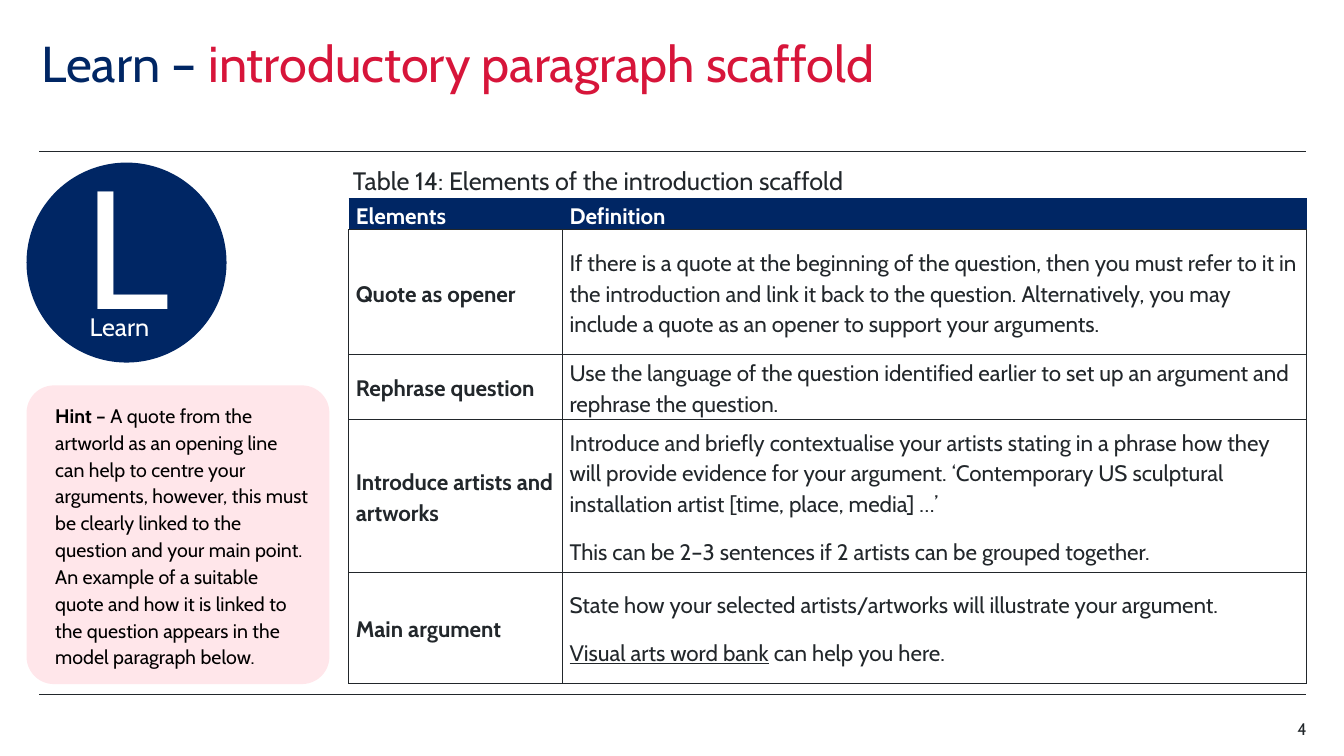
from dataclasses import dataclass

from lxml import etree
from pptx import Presentation
from pptx.dml.color import RGBColor
from pptx.enum.shapes import MSO_CONNECTOR, MSO_SHAPE
from pptx.enum.text import MSO_ANCHOR, MSO_AUTO_SIZE, PP_ALIGN
from pptx.oxml.ns import qn
from pptx.util import Inches, Pt

STRAIGHT = MSO_CONNECTOR.STRAIGHT
OVAL, ROUNDED = MSO_SHAPE.OVAL, MSO_SHAPE.ROUNDED_RECTANGLE
TOP, MIDDLE = MSO_ANCHOR.TOP, MSO_ANCHOR.MIDDLE
LEFT, CENTER, RIGHT = PP_ALIGN.LEFT, PP_ALIGN.CENTER, PP_ALIGN.RIGHT

NAVY, RED, PINK = "002664", "D7153A", "FFE6EA"
INK, WHITE, BLACK = "22272B", "FFFFFF", "000000"
LINE_SPACING = 1.14


@dataclass
class Element:
    name: str
    definition: list[str]
    height: float
    underlined: str = ""


ELEMENTS = [
    Element("Quote as opener", [
        "If there is a quote at the beginning of the question, then you must refer "
        "to it in the introduction and link it back to the question. Alternatively, "
        "you may include a quote as an opener to support your arguments."], 1.24),
    Element("Rephrase question", [
        "Use the language of the question identified earlier to set up an argument "
        "and rephrase the question."], 0.64),
    Element("Introduce artists and artworks", [
        "Introduce and briefly contextualise your artists stating in a phrase how "
        "they will provide evidence for your argument. ‘Contemporary US sculptural "
        "installation artist [time, place, media] …’",
        "This can be 2–3 sentences if 2 artists can be grouped together."], 1.52),
    Element("Main argument", [
        "State how your selected artists/artworks will illustrate your argument.",
        "Visual arts word bank can help you here."], 1.1, "Visual arts word bank"),
]


def rgb(color: str) -> RGBColor:
    return RGBColor.from_string(color)


def style(paragraph, size: float, color: str, bold: bool = False, align=LEFT) -> None:
    paragraph.alignment = align
    font = paragraph.font
    font.name, font.size, font.bold = "Cabin", Pt(size), bold
    font.color.rgb = rgb(color)


def set_margins(frame, left: float, top: float, right: float, bottom: float) -> None:
    frame.margin_left, frame.margin_top = Inches(left), Inches(top)
    frame.margin_right, frame.margin_bottom = Inches(right), Inches(bottom)


def add_rule(y: float) -> None:
    rule = slide.shapes.add_connector(
        STRAIGHT, Inches(0.39), Inches(y), Inches(12.95), Inches(y))
    rule.line.color.rgb, rule.line.width = rgb(INK), Pt(0.5)
    etree.SubElement(rule._element.spPr, qn("a:effectLst"))


def add_panel(kind, box: tuple, color: str):
    panel = slide.shapes.add_shape(kind, *map(Inches, box))
    panel.shadow.inherit = False
    panel.fill.solid()
    panel.fill.fore_color.rgb = panel.line.color.rgb = rgb(color)
    panel.line.width = Pt(1)
    panel.text_frame.word_wrap = True
    panel.text_frame.vertical_anchor = MIDDLE
    return panel


def add_label(text: str, box: tuple, size: float, color: str, align=LEFT,
              anchor=TOP) -> None:
    frame = slide.shapes.add_textbox(*map(Inches, box)).text_frame
    frame.word_wrap, frame.vertical_anchor = True, anchor
    set_margins(frame, 0, 0, 0, 0)
    frame.text = text
    style(frame.paragraphs[0], size, color, align=align)


def set_borders(cell, header: bool) -> None:
    properties = cell._tc.get_or_add_tcPr()
    for side in ("lnL", "lnR", "lnT", "lnB"):
        color, width = (NAVY, 0.5) if header and side != "lnB" else (INK, 1)
        border = etree.SubElement(properties, qn(f"a:{side}"), w=str(Pt(width)))
        fill = etree.SubElement(border, qn("a:solidFill"))
        etree.SubElement(fill, qn("a:srgbClr"), val=color)


def fill_cell(cell, texts: list[str], bold: bool, header: bool = False,
              underlined: str = "") -> None:
    set_borders(cell, header)
    cell.fill.solid()
    cell.fill.fore_color.rgb = rgb(NAVY if header else WHITE)
    cell.vertical_anchor = MIDDLE
    set_margins(cell, 0.07, 0, 0.07, 0)
    frame = cell.text_frame
    for index, text in enumerate(texts):
        paragraph = frame.add_paragraph() if index else frame.paragraphs[0]
        if underlined and text.startswith(underlined):
            link = paragraph.add_run()
            link.text, link.font.underline = underlined, True
            text = text.removeprefix(underlined)
        paragraph.add_run().text = text
        style(paragraph, 16, WHITE if header else INK, bold)
        paragraph.line_spacing = LINE_SPACING
        if index:
            paragraph.space_before = Pt(6)
        if index < len(texts) - 1:
            paragraph.space_after = Pt(6)


presentation = Presentation()
presentation.slide_width, presentation.slide_height = Inches(13.33), Inches(7.5)
slide = presentation.slides.add_slide(presentation.slide_layouts[5])

# Title between the page edge and the upper rule
title = slide.shapes.title
title.left, title.top = Inches(0.41), Inches(0.39)
title.width, title.height = Inches(11.01), Inches(1.1)
heading = title.text_frame
heading.auto_size, heading.vertical_anchor = MSO_AUTO_SIZE.NONE, TOP
set_margins(heading, 0, 0, 0, 0)
heading_line = heading.paragraphs[0]
heading_line.add_run().text = "Learn – "
topic = heading_line.add_run()
topic.text = "introductory paragraph scaffold"
style(heading_line, 36, NAVY)
topic.font.color.rgb = rgb(RED)
heading_line.line_spacing = 0.9

for rule_y in (1.5, 6.89):
    add_rule(rule_y)

# Learn badge
badge = add_panel(OVAL, (0.27, 1.62, 1.97, 1.97), NAVY)
set_margins(badge.text_frame, 0.1, 0.05, 0.1, 0.45)
badge.text_frame.text = "L"
style(badge.text_frame.paragraphs[0], 120, WHITE, align=CENTER)
add_label("Learn", (0.89, 3.09, 0.73, 0.48), 18, WHITE)

# Hint
hint = add_panel(ROUNDED, (0.27, 3.83, 2.99, 2.95), PINK)
hint.adjustments[0] = 0.09
set_margins(hint.text_frame, 0.2, 0.05, 0.1, 0.05)
advice = hint.text_frame.paragraphs[0]
hint_lead = advice.add_run()
hint_lead.text, hint_lead.font.bold = "Hint – ", True
advice.add_run().text = (
    "A quote from the artworld as an opening line can help to centre your arguments, "
    "however, this must be clearly linked to the question and your main point. An "
    "example of a suitable quote and how it is linked to the question appears in the "
    "model paragraph below.")
style(advice, 14, BLACK)
advice.line_spacing = LINE_SPACING

# Scaffold table with caption
add_label("Table 14: Elements of the introduction scaffold",
          (3.5, 1.61, 7.67, 0.37), 18, INK, anchor=MIDDLE)
scaffold = slide.shapes.add_table(
    len(ELEMENTS) + 1, 2, Inches(3.46), Inches(1.97), Inches(9.5), Inches(4.81)).table
for column, width in zip(scaffold.columns, (2.12, 7.38)):
    column.width = Inches(width)
scaffold.rows[0].height = Inches(0.31)
for column_index, column_title in enumerate(("Elements", "Definition")):
    fill_cell(scaffold.cell(0, column_index), [column_title], bold=True, header=True)
for row_index, element in enumerate(ELEMENTS, start=1):
    scaffold.rows[row_index].height = Inches(element.height)
    fill_cell(scaffold.cell(row_index, 0), [element.name], bold=True)
    fill_cell(scaffold.cell(row_index, 1), element.definition, bold=False,
              underlined=element.underlined)

# Page number
add_label("4", (12.17, 7.13, 0.79, 0.2), 12, INK, align=RIGHT)

presentation.save("out.pptx")
